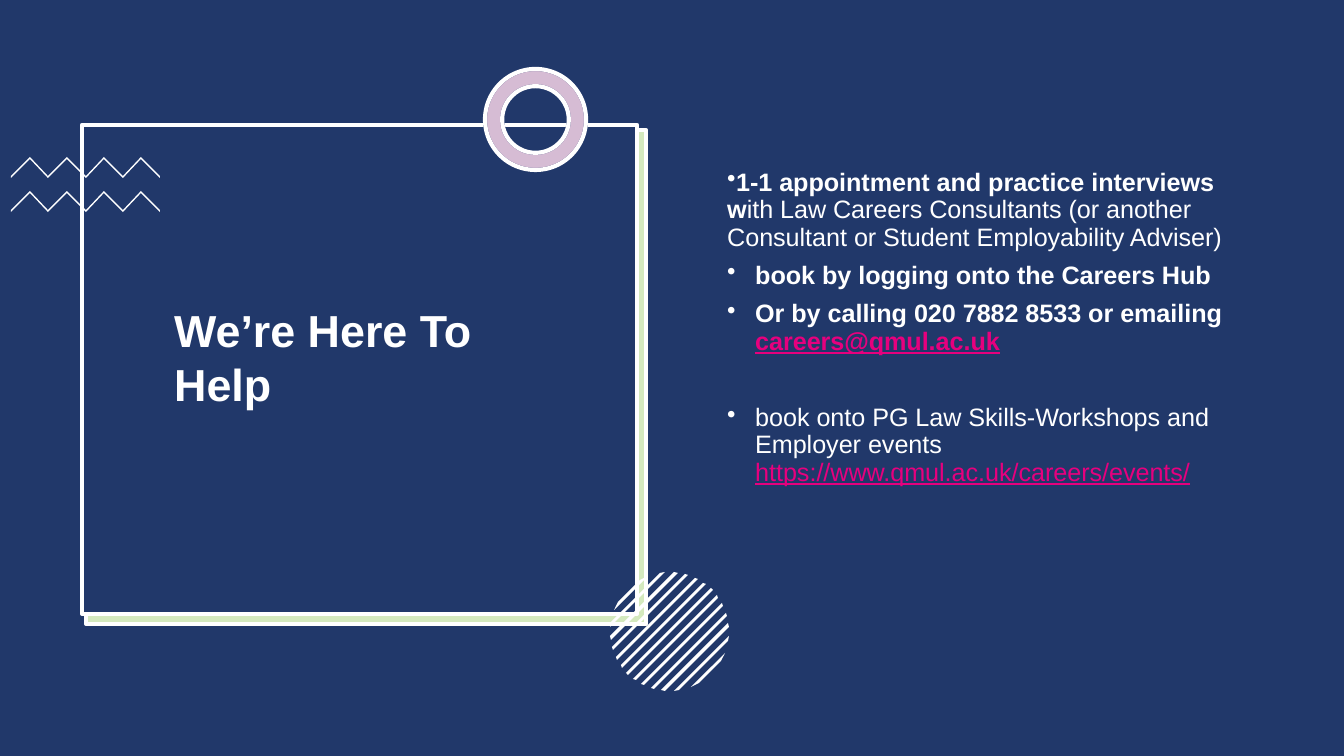
import math

from pptx import Presentation, util as u
from pptx.dml import color
from pptx.enum import shapes, text
from pptx.oxml import ns, xmlchemy

SCALE = 914400 / 134.4
COLORS = {"navy": "21386A", "white": "FFFFFF", "green": "73B82B", "purple": "792273", "pink": "E6007E"}

ADVICE = [
    [("1-1 appointment and practice interviews w", "bold"),
     ("ith Law Careers Consultants (or another Consultant or Student Employability Adviser)", "")],
    [("book by logging onto the Careers Hub", "bold")],
    [("Or by calling 020 7882 8533 or emailing ", "bold"), ("careers@qmul.ac.uk", "bold link")],
    [("book onto PG Law Skills-Workshops and Employer events ", ""),
     ("https://www.qmul.ac.uk/careers/events/", "link")],
]


def px(length):
    """Turn px into EMU."""
    return u.Emu(round(length * SCALE))


def rgb(name):
    """Look up a named colour."""
    return color.RGBColor.from_string(COLORS[name])


def paint(shape, fill, line=None, alpha=None):
    """Give a shape its fill, outline and opacity in percent."""
    shape.shadow.inherit = False
    shape.fill.solid()
    shape.fill.fore_color.rgb = rgb(fill)
    if alpha:
        tint = shape.fill._xPr.find(ns.qn("a:solidFill"))[0]
        opacity = xmlchemy.OxmlElement("a:alpha")
        opacity.set("val", str(alpha * 1000))
        tint.append(opacity)
    if line:
        shape.line.color.rgb = rgb(line)
        shape.line.width = u.Pt(2.25)
    else:
        shape.line.fill.background()


def add_preset(slide, kind, box, fill, line=None, alpha=None):
    """Add a painted preset shape."""
    shape = slide.shapes.add_shape(kind, *map(px, box))
    paint(shape, fill, line, alpha)
    return shape


def add_polygon(group, points):
    """Add a closed white polygon to a group."""
    builder = group.shapes.build_freeform(*points[0], scale=SCALE)
    builder.add_line_segments(points[1:], close=True)
    paint(builder.convert_to_shape(), "white")


def add_frame(slide, left, top, width, height):
    """Draw the navy panel over its offset green shadow."""
    rect = shapes.MSO_SHAPE.RECTANGLE
    shadow = (left + 4, top + 5, width + 5, height + 5)
    add_preset(slide, rect, shadow, "white")
    add_preset(slide, rect, shadow, "green", "white", 30)
    add_preset(slide, rect, (left, top, width, height), "navy", "white")


def add_zigzags(slide, left, top, width, height):
    """Draw two zigzag bands, one at each end of the box height."""
    group = slide.shapes.add_group_shape()
    teeth, rise, thickness = 8, 19, 2
    for band_top in (top, top + height - rise - thickness):
        upper = [(left + i * width / teeth, band_top + (0 if i % 2 else rise)) for i in range(teeth + 1)]
        lower = [(x, y + thickness) for x, y in reversed(upper)]
        add_polygon(group, upper + lower)


def add_ring(slide, left, top, size):
    """Draw the tinted ring on a white base."""
    for fill, line, alpha in (("white", "navy", None), ("purple", "white", 30)):
        ring = add_preset(slide, shapes.MSO_SHAPE.DONUT, (left, top, size, size), fill, line, alpha)
        ring.adjustments[0] = 0.17


def add_striped_disc(slide, left, top, size):
    """Draw diagonal stripes clipped to a circle."""
    group = slide.shapes.add_group_shape()
    radius, gap, half_band = size / 2, 13.2, 2
    center_x, center_y = left + radius, top + radius

    def chord(offset):
        """Return the upper and lower ends of a diagonal chord."""
        reach = math.sqrt((radius ** 2 - offset ** 2 / 2) / 2)
        middle = offset / 2
        return [(center_x + middle + reach, center_y + middle - reach),
                (center_x + middle - reach, center_y + middle + reach)]

    for stripe in range(-6, 7):
        offset = stripe * gap
        add_polygon(group, chord(offset - half_band) + chord(offset + half_band)[::-1])


def add_text(slide, box):
    """Add a wrapping text box and return its frame."""
    frame = slide.shapes.add_textbox(*map(px, box)).text_frame
    frame.word_wrap = True
    return frame


def style(run, size, bold=False, link=False):
    """Format a run of text."""
    run.font.name = "Arial"
    run.font.size = u.Pt(size)
    run.font.bold = bold
    run.font.underline = link
    run.font.color.rgb = rgb("pink" if link else "white")


def add_title(slide, *box):
    """Write the heading inside the frame."""
    frame = add_text(slide, box)
    frame.text = "We’re Here To Help"
    style(frame.paragraphs[0].runs[0], 24, bold=True)


def add_advice(slide, *box):
    """Write the bulleted ways to get help."""
    frame = add_text(slide, box)
    frame.margin_top = px(45)
    frame.vertical_anchor = text.MSO_ANCHOR.TOP
    for i, pieces in enumerate(ADVICE):
        item = frame.paragraphs[0] if i == 0 else frame.add_paragraph()
        hang = px(28) if i else 0
        properties = item._p.get_or_add_pPr()
        properties.set("marL", str(hang))
        properties.set("indent", str(-hang))
        bullet = xmlchemy.OxmlElement("a:buChar")
        bullet.set("char", "•")
        properties.append(bullet)
        item.line_spacing = 0.9
        item.space_after = u.Pt(26.5 if i == 2 else 6)
        for words, look in pieces:
            run = item.add_run()
            run.text = words
            style(run, 13.5, "bold" in look, "link" in look)


def main():
    """Build and save the slide."""
    deck = Presentation()
    deck.slide_width, deck.slide_height = px(1344), px(756)
    slide = deck.slides.add_slide(deck.slide_layouts[6])
    add_preset(slide, shapes.MSO_SHAPE.RECTANGLE, (0, 0, 1344, 756), "navy")
    add_frame(slide, 82, 125, 555, 489)
    add_zigzags(slide, 11, 157, 149, 55)
    add_ring(slide, 485, 69, 101)
    add_striped_disc(slide, 610, 572, 119)
    add_advice(slide, 714, 125, 548, 480)
    add_title(slide, 161, 296, 425, 122)
    deck.save("out.pptx")


if __name__ == "__main__":
    main()
